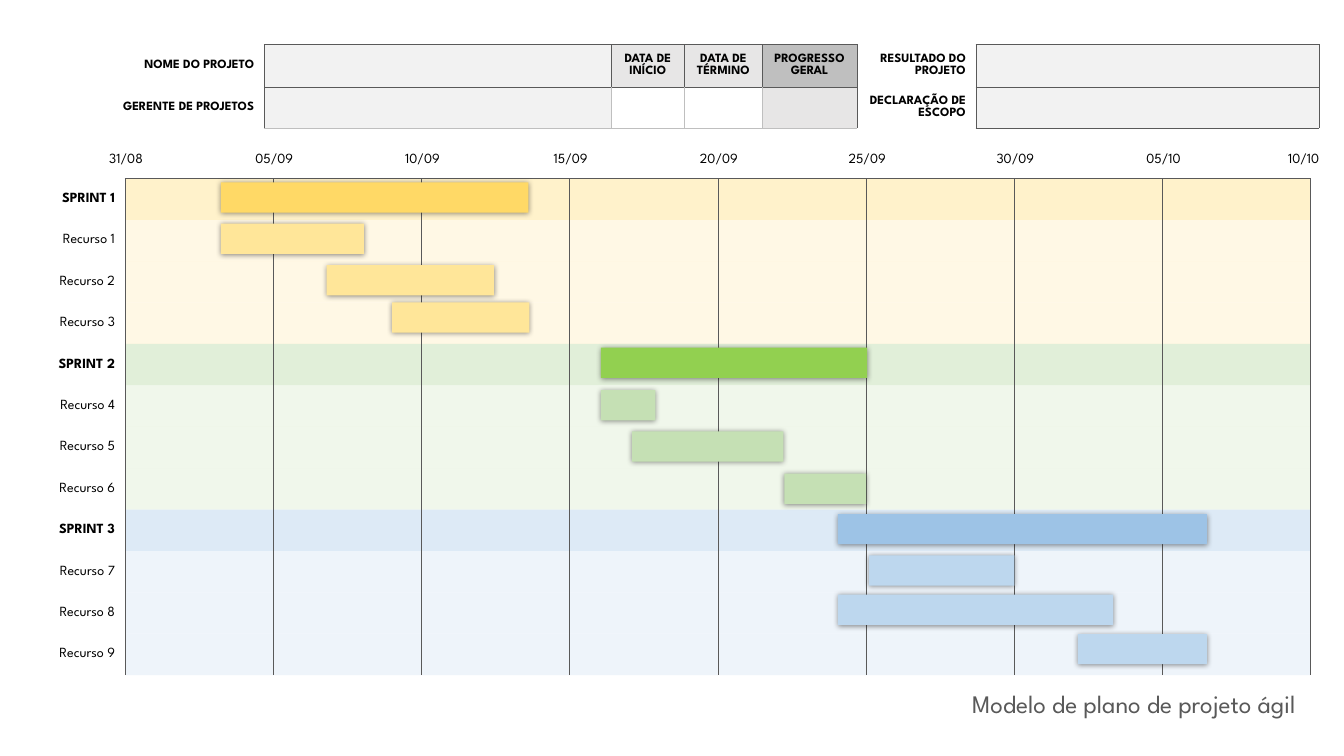
from lxml import etree
from pptx import Presentation
from pptx.dml.color import RGBColor
from pptx.enum.shapes import MSO_SHAPE
from pptx.enum.text import MSO_ANCHOR, MSO_AUTO_SIZE, PP_ALIGN
from pptx.oxml.ns import qn
from pptx.util import Inches, Pt

RECTANGLE = MSO_SHAPE.RECTANGLE
MIDDLE = MSO_ANCHOR.MIDDLE
FIT_TEXT = MSO_AUTO_SIZE.SHAPE_TO_FIT_TEXT
CENTER, RIGHT = PP_ALIGN.CENTER, PP_ALIGN.RIGHT

FONT = "League Spartan"
PLAIN_TABLE_STYLE = "{2D5ABB26-0587-4C30-8999-92F81FD0307C}"
COLORS = {
    "text": "000000", "line": "595959", "soft line": "BFBFBF", "white": "FFFFFF",
    "field": "F2F2F2", "heading": "E7E6E6", "progress": "BFBFBF",
    "gold": "FFD966", "yellow": "FFE699", "cream": "FFF2CC",
    "bright green": "92D050", "green": "C5E0B4", "mint": "E2F0D9",
    "deep blue": "9DC3E6", "blue": "BDD7EE", "ice": "DEEBF7",
}
THIN, SOFT = ("line", 0.25), ("soft line", 0.5)

DATES = ["31/08", "05/09", "10/09", "15/09", "20/09", "25/09", "30/09", "05/10", "10/10"]

# Sprint bar colour, sprint band and task bar colour, task band, then rows:
# label and bar left, top, width
SPRINTS = [
    ("gold", "yellow", "cream", [
        ("SPRINT 1", 2.19, 1.81, 3.05), ("Recurso 1", 2.19, 2.22, 1.42),
        ("Recurso 2", 3.24, 2.63, 1.66), ("Recurso 3", 3.89, 3, 1.36)]),
    ("bright green", "green", "mint", [
        ("SPRINT 2", 5.96, 3.45, 2.64), ("Recurso 4", 5.96, 3.87, 0.54),
        ("Recurso 5", 6.27, 4.28, 1.5), ("Recurso 6", 7.78, 4.7, 0.81)]),
    ("deep blue", "blue", "ice", [
        ("SPRINT 3", 8.31, 5.1, 3.66), ("Recurso 7", 8.62, 5.51, 1.44),
        ("Recurso 8", 8.31, 5.9, 2.73), ("Recurso 9", 10.69, 6.29, 1.28)]),
]

# Label, fill and alignment of each project cell
PROJECT_ROWS = [
    [("NOME DO PROJETO", None, RIGHT), ("", "field", CENTER),
     ("DATA DE INÍCIO", "heading", CENTER), ("DATA DE TÉRMINO", "heading", CENTER),
     ("PROGRESSO GERAL", "progress", CENTER),
     ("RESULTADO DO PROJETO", None, RIGHT), ("", "field", CENTER)],
    [("GERENTE DE PROJETOS", None, RIGHT), ("", "field", CENTER),
     ("", "white", CENTER), ("", "white", CENTER), ("", "heading", CENTER),
     ("DECLARAÇÃO DE ESCOPO", None, RIGHT), ("", "field", CENTER)],
]


class SlideBuilder:
    def __init__(self, slide):
        self.slide = slide

    def color(self, name):
        return RGBColor.from_string(COLORS[name])

    def add_text(self, paragraph, text, size, align, color="text", bold=False):
        paragraph.alignment = align
        run = paragraph.add_run()
        run.text = text
        run.font.name = FONT
        run.font.size = Pt(size)
        run.font.bold = bold
        run.font.color.rgb = self.color(color)

    def textbox(self, left, top, width, height, text, size, align, color="text"):
        shape = self.slide.shapes.add_textbox(
            Inches(left), Inches(top), Inches(width), Inches(height))
        frame = shape.text_frame
        frame.word_wrap = True
        frame.auto_size = FIT_TEXT
        self.add_text(frame.paragraphs[0], text, size, align, color)
        return frame

    def bar(self, left, top, width, color):
        shape = self.slide.shapes.add_shape(
            RECTANGLE, Inches(left), Inches(top), Inches(width), Inches(0.3))
        shape.fill.solid()
        shape.fill.fore_color.rgb = self.color(color)
        shape.line.fill.background()
        shape.shadow.inherit = False
        effects = shape._element.spPr.find(qn("a:effectLst"))
        shadow = etree.SubElement(effects, qn("a:outerShdw"), blurRad=str(Pt(4)),
                                  dist=str(Pt(0.5)), dir="5400000", rotWithShape="0")
        tint = etree.SubElement(shadow, qn("a:srgbClr"), val=COLORS["text"])
        etree.SubElement(tint, qn("a:alpha"), val="43000")

    def table(self, left, top, widths, heights):
        table = self.slide.shapes.add_table(
            len(heights), len(widths), Inches(left), Inches(top),
            Inches(sum(widths)), Inches(sum(heights))).table
        table.first_row = table.horz_banding = False
        table._tbl.tblPr.find(qn("a:tableStyleId")).text = PLAIN_TABLE_STYLE
        for column, width in zip(table.columns, widths):
            column.width = Inches(width)
        for row, height in zip(table.rows, heights):
            row.height = Inches(height)
        return table

    def cell(self, cell, fill, borders, alpha=None):
        cell.vertical_anchor = MIDDLE
        cell.margin_top = cell.margin_bottom = Inches(0.03)
        if fill:
            cell.fill.solid()
            cell.fill.fore_color.rgb = self.color(fill)
        else:
            cell.fill.background()
        properties = cell._tc.tcPr
        if alpha:
            tint = properties.find(qn("a:solidFill")).find(qn("a:srgbClr"))
            etree.SubElement(tint, qn("a:alpha"), val=str(alpha * 1000))
        for position, side in enumerate("LRTB"):
            line = etree.Element(qn(f"a:ln{side}"))
            properties.insert(position, line)
            if side in borders:
                color, width = borders[side]
                line.set("w", str(Pt(width)))
                solid = etree.SubElement(line, qn("a:solidFill"))
                etree.SubElement(solid, qn("a:srgbClr"), val=COLORS[color])
            else:
                etree.SubElement(line, qn("a:noFill"))

    def plan(self):
        rows = [(label, band if index == 0 else light, index == 0)
                for _, band, light, tasks in SPRINTS
                for index, (label, *_) in enumerate(tasks)]
        table = self.table(0.36, 1.77, [0.88] + [1.47] * 8, [4.93 / 12] * len(rows))
        for row, (label, fill, is_sprint) in enumerate(rows):
            name_cell = table.cell(row, 0)
            self.cell(name_cell, None, {"R": THIN})
            self.add_text(name_cell.text_frame.paragraphs[0], label, 10, RIGHT, bold=is_sprint)
            for column in range(1, 9):
                borders = {"L": THIN, "R": THIN}
                if row == 0:
                    borders["T"] = THIN
                self.cell(table.cell(row, column), fill, borders, alpha=50)

    def project(self):
        table = self.table(0.81, 0.44, [1.81, 3.44, 0.73, 0.77, 0.94, 1.18, 3.4], [0.42, 0.41])
        for row, cells in enumerate(PROJECT_ROWS):
            for column, (label, fill, align) in enumerate(cells):
                borders = dict.fromkeys("LRTB", THIN)
                if fill is None:
                    borders = {"R": THIN}
                    if column:
                        borders["L"] = THIN
                elif row == 1 and column < 5:
                    borders = {"L": THIN if column == 1 else SOFT,
                               "R": THIN if column == 4 else SOFT,
                               "T": THIN, "B": SOFT}
                cell = table.cell(row, column)
                self.cell(cell, fill, borders)
                if label:
                    self.add_text(cell.text_frame.paragraphs[0], label, 9, align, bold=True)


def main():
    presentation = Presentation()
    presentation.slide_width = Inches(13.33)
    presentation.slide_height = Inches(7.5)
    builder = SlideBuilder(presentation.slides.add_slide(presentation.slide_layouts[6]))

    # Title
    title = builder.textbox(5.82, 6.78, 7.19, 0.4, "Modelo de plano de projeto ágil",
                            18, RIGHT, "line")
    title.margin_right = Inches(0.16)

    # Schedule grid and date scale; the last date stays inside the slide
    builder.plan()
    for index, date in enumerate(DATES):
        left = min(0.94 + 1.47 * index, 12.62)
        builder.textbox(left, 1.43, 0.62, 0.27, date, 10, CENTER)

    # Sprint and task bars
    for sprint_color, task_color, _, tasks in SPRINTS:
        for index, (_, left, top, width) in enumerate(tasks):
            builder.bar(left, top, width, task_color if index else sprint_color)

    # Project details
    builder.project()
    presentation.save("out.pptx")


if __name__ == "__main__":
    main()
